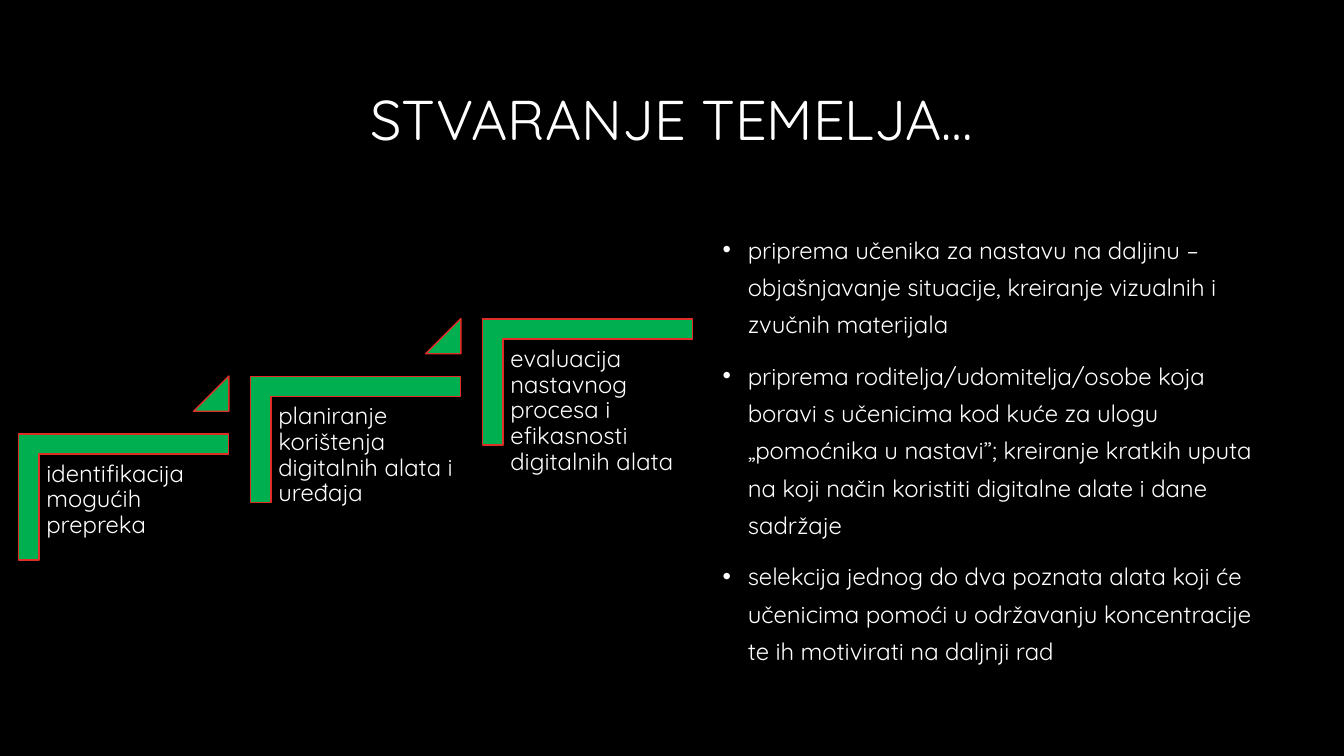
"""Builds the slide with a green staircase and a bulleted list."""
from dataclasses import dataclass

from lxml.etree import SubElement
from pptx import Presentation
from pptx.dml.color import RGBColor
from pptx.enum.shapes import MSO_SHAPE
from pptx.enum.text import MSO_ANCHOR, PP_ALIGN
from pptx.oxml.ns import qn
from pptx.util import Inches, Pt

COLORS = {"background": "000000", "text": "FFFFFF", "step": "00B050", "edge": "DF2E28"}
WIDTH, HEIGHT = Inches(13.33), Inches(7.5)
COL, ROW = WIDTH / 100, HEIGHT / 100
STEP_COLS, STEP_ROWS = 17.26, -7.6
INDENT = Inches(0.25)


@dataclass(frozen=True)
class Box:
    left: float
    top: float
    width: float
    height: float

    def climb(self, n: int) -> "Box":
        return Box(self.left + n * STEP_COLS, self.top + n * STEP_ROWS, self.width, self.height)

    def emu(self) -> tuple[int, ...]:
        units = (COL, ROW, COL, ROW)
        return tuple(round(v * u) for v, u in zip((self.left, self.top, self.width, self.height), units))


@dataclass(frozen=True)
class Part:
    kind: MSO_SHAPE
    box: Box
    adjustments: tuple[float, ...]
    rotation: float = 0


@dataclass(frozen=True)
class Text:
    box: Box
    paragraphs: tuple[str, ...]
    size: float
    paragraph_format: dict
    frame_format: dict
    bullet: str = ""
    gap: float = 0


CORNER = Part(MSO_SHAPE.CORNER, Box(4.5, 51.87, 9.38, 27.73), (0.16, 0.16), 90)
TRIANGLE = Part(MSO_SHAPE.ISOSCELES_TRIANGLE, Box(14.4, 49.73, 2.63, 4.67), (1,))
LABEL_BOX = Box(2.93, 60.13, 14.1, 22)
LABEL_FRAME = {f"margin_{side}": Inches(0.07) for side in ("left", "top", "right", "bottom")}

STEPS = (
    "identifikacija mogućih prepreka",
    "planiranje korištenja digitalnih alata i uređaja",
    "evaluacija nastavnog procesa i efikasnosti digitalnih alata",
)
TITLE = Text(
    Box(6.25, 5.07, 87.5, 22.27), ("STVARANJE TEMELJA…",), 40,
    {"alignment": PP_ALIGN.CENTER, "line_spacing": 0.9},
    {"vertical_anchor": MSO_ANCHOR.MIDDLE},
)
BODY = Text(
    Box(53.03, 29.33, 42.23, 67.33),
    (
        "priprema učenika za nastavu na daljinu – objašnjavanje situacije, "
        "kreiranje vizualnih i zvučnih materijala",
        "priprema roditelja/udomitelja/osobe koja boravi s učenicima kod kuće za ulogu "
        "„pomoćnika u nastavi”; kreiranje kratkih uputa na koji način koristiti "
        "digitalne alate i dane sadržaje",
        "selekcija jednog do dva poznata alata koji će učenicima pomoći u održavanju "
        "koncentracije te ih motivirati na daljnji rad",
    ),
    17.1, {"line_spacing": 1.3}, {}, "•", 10,
)


def color(name: str) -> RGBColor:
    return RGBColor.from_string(COLORS[name])


def apply(target, values: dict) -> None:
    for name, value in values.items():
        setattr(target, name, value)


def add_bullet(p, char: str) -> None:
    pPr = p._p.get_or_add_pPr()
    pPr.set("marL", str(INDENT))
    pPr.set("indent", str(-INDENT))
    SubElement(pPr, qn("a:buFont"), typeface="Arial")
    SubElement(pPr, qn("a:buChar"), char=char)


def draw_text(s, text: Text) -> None:
    tf = s.shapes.add_textbox(*text.box.emu()).text_frame
    apply(tf, {"word_wrap": True, **text.frame_format})
    for i, words in enumerate(text.paragraphs):
        p = tf.add_paragraph() if i else tf.paragraphs[0]
        if text.bullet:
            add_bullet(p, text.bullet)
        apply(p, {**text.paragraph_format, "space_before": Pt(text.gap if i else 0)})
        r = p.add_run()
        r.text = words
        apply(r.font, {"name": "Quicksand", "size": Pt(text.size)})
        r.font.color.rgb = color("text")


def draw_part(s, part: Part, n: int) -> None:
    sp = s.shapes.add_shape(part.kind, *part.box.climb(n).emu())
    sp.rotation = part.rotation
    sp.shadow.inherit = False
    for i, value in enumerate(part.adjustments):
        sp.adjustments[i] = value
    sp.fill.solid()
    sp.fill.fore_color.rgb = color("step")
    sp.line.color.rgb = color("edge")
    sp.line.width = Pt(1)


def main() -> None:
    prs = Presentation()
    apply(prs, {"slide_width": WIDTH, "slide_height": HEIGHT})
    s = prs.slides.add_slide(prs.slide_layouts[6])
    s.background.fill.solid()
    s.background.fill.fore_color.rgb = color("background")
    draw_text(s, TITLE)
    for n, words in enumerate(STEPS):
        draw_part(s, CORNER, n)
        draw_text(s, Text(LABEL_BOX.climb(n), (words,), 17, {"line_spacing": 0.9}, LABEL_FRAME))
        if n < len(STEPS) - 1:
            draw_part(s, TRIANGLE, n)
    draw_text(s, BODY)
    prs.save("out.pptx")


if __name__ == "__main__":
    main()
